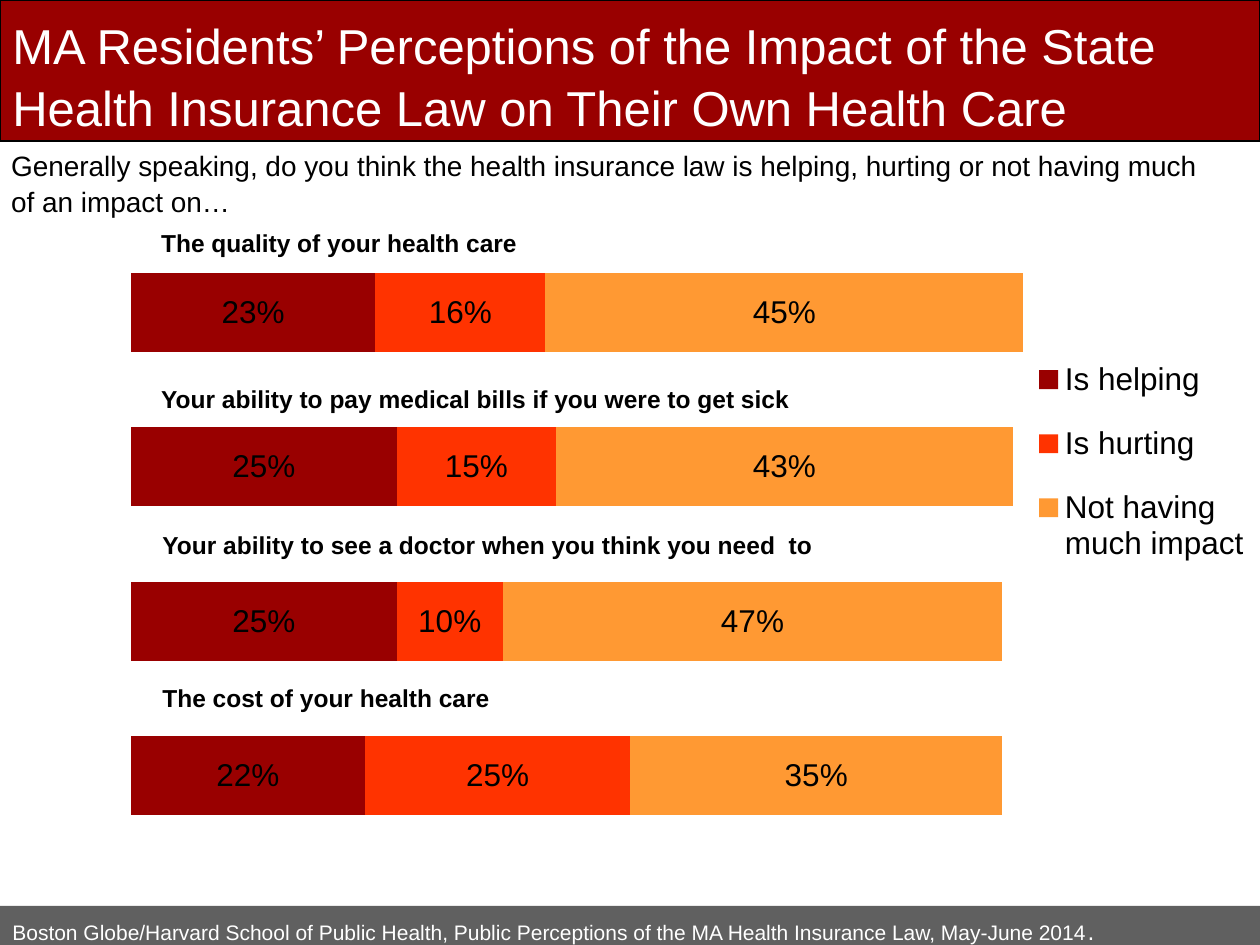
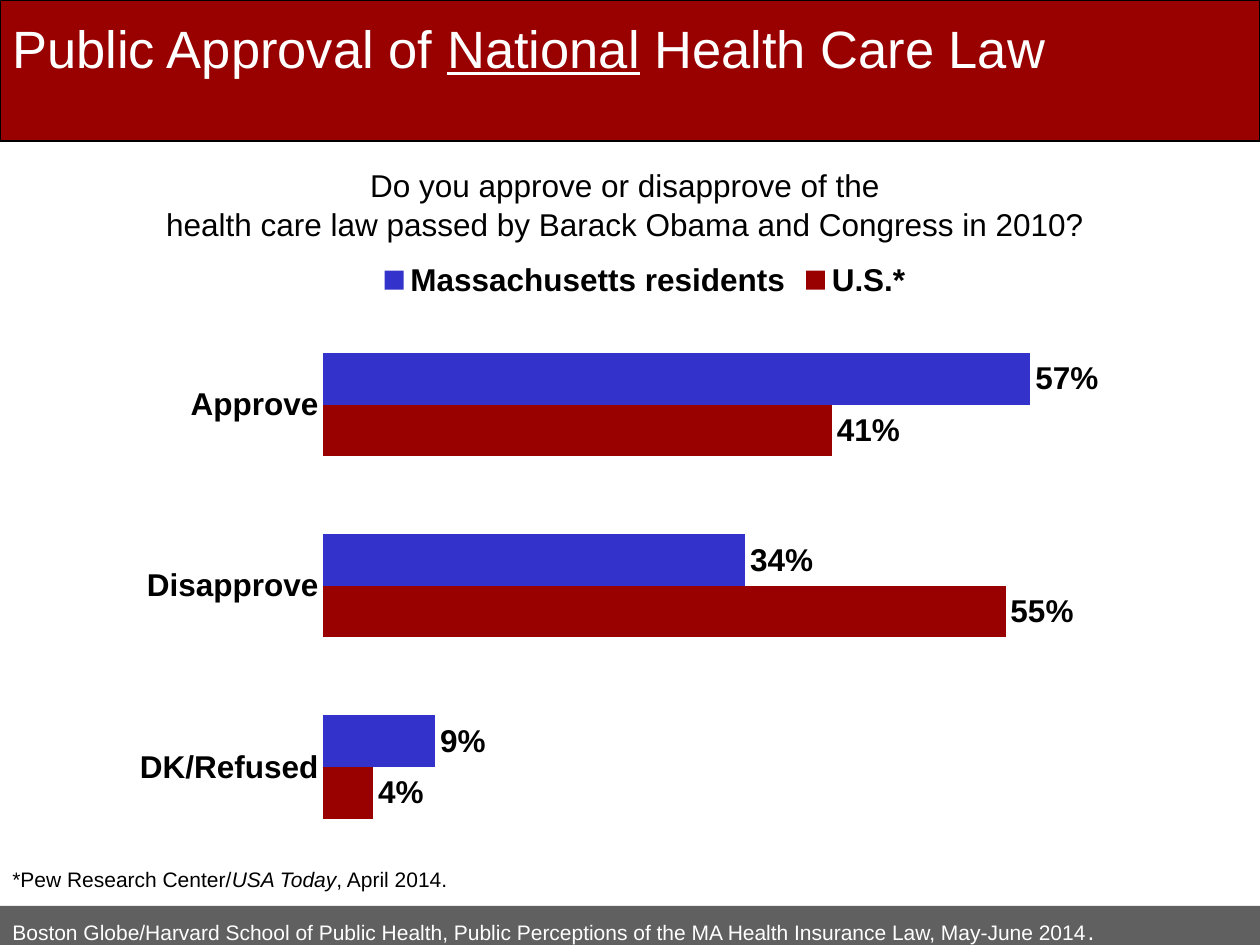
from dataclasses import dataclass

import pptx
import pptx.chart.data
import pptx.dml.color
import pptx.enum.chart
import pptx.enum.shapes
import pptx.enum.text
import pptx.oxml
import pptx.oxml.ns
import pptx.util

PX = 9144  # EMU per px, 100 px to the inch
CHART = pptx.enum.chart
ALIGN = pptx.enum.text.PP_ALIGN


@dataclass(frozen=True)
class Theme:
    font: str = "Arial"
    white: str = "FFFFFF"
    black: str = "000000"
    red: str = "990000"
    grey: str = "606060"
    orange: str = "FF3300"
    amber: str = "FF9933"
    blue: str = "3333CC"
    note: int = 12
    label: int = 14
    lead: int = 16
    body: int = 18
    title: int = 28
    large: int = 30
    leading: float = 1.05


THEME = Theme()


@dataclass(frozen=True)
class Rect:
    left: int
    top: int
    width: int
    height: int

    def emu(self) -> tuple[int, ...]:
        return tuple(n * PX for n in (self.left, self.top, self.width, self.height))


@dataclass(frozen=True)
class Run:
    text: str
    size: int | None = None
    italic: bool | None = None
    under: bool | None = None


@dataclass(frozen=True)
class Text:
    rect: Rect
    lines: tuple[tuple[Run, ...], ...]
    size: int
    color: str = THEME.black
    bold: bool = False
    align: ALIGN = ALIGN.LEFT


@dataclass(frozen=True)
class Series:
    name: str
    color: str
    values: tuple[float, ...]


@dataclass(frozen=True)
class Frame:
    """Place inside a chart, as shares of its width and height."""
    x: float
    y: float
    w: float
    h: float


@dataclass(frozen=True)
class Bars:
    rect: Rect
    kind: CHART.XL_CHART_TYPE
    cats: tuple[str, ...]
    series: tuple[Series, ...]
    plot: Frame
    top: float
    gap: int
    overlap: int
    spot: CHART.XL_LABEL_POSITION
    side: CHART.XL_LEGEND_POSITION
    key: Frame | None = None
    bold: bool = False
    named: bool = True


FOOTER = (
    Run("Boston Globe/Harvard School of Public Health, Public Perceptions "
        "of the MA Health Insurance Law, May-June 2014"),
    Run(".", size=THEME.label),
)


def rgb(code: str) -> pptx.dml.color.RGBColor:
    return pptx.dml.color.RGBColor.from_string(code)


def style(font, size: int, color: str, bold: bool = False) -> None:
    font.name = THEME.font
    font.size = pptx.util.Pt(size)
    font.bold = bold
    font.color.rgb = rgb(color)


def write(para, runs: tuple[Run, ...], size: int, color: str, bold: bool = False) -> None:
    style(para.font, size, color, bold)
    for item in runs:
        run = para.add_run()
        run.text = item.text
        if item.size:
            run.font.size = pptx.util.Pt(item.size)
        if item.italic:
            run.font.italic = True
        if item.under:
            run.font.underline = True


def add_band(slide, rect: Rect, fill: str, line: str | None = None):
    band = slide.shapes.add_shape(pptx.enum.shapes.MSO_SHAPE.RECTANGLE, *rect.emu())
    band.shadow.inherit = False
    band.fill.solid()
    band.fill.fore_color.rgb = rgb(fill)
    if line:
        band.line.color.rgb = rgb(line)
        band.line.width = pptx.util.Pt(1)
    else:
        band.line.fill.background()
    return band


def add_text(slide, text: Text) -> None:
    frame = slide.shapes.add_textbox(*text.rect.emu()).text_frame
    frame.word_wrap = True
    frame.auto_size = pptx.enum.text.MSO_AUTO_SIZE.SHAPE_TO_FIT_TEXT
    for i, runs in enumerate(text.lines):
        para = frame.add_paragraph() if i else frame.paragraphs[0]
        para.alignment = text.align
        para.line_spacing = THEME.leading
        write(para, runs, text.size, text.color, text.bold)


def add_title(slide, runs: tuple[Run, ...], size: int, height: int) -> None:
    add_text(slide, Text(Rect(0, 5, 1000, height), (runs,), size, THEME.white))


def set_frame(parent, index: int, frame: Frame, inner: bool = False) -> None:
    """Give a plot area or legend a fixed place."""
    for old in parent.findall(pptx.oxml.ns.qn("c:layout")):
        parent.remove(old)
    target = '<c:layoutTarget val="inner"/>' if inner else ""
    modes = "".join(f'<c:{axis}Mode val="edge"/>' for axis in "xy")
    sizes = "".join(f'<c:{name} val="{getattr(frame, name)}"/>' for name in "xywh")
    parent.insert(index, pptx.oxml.parse_xml(
        f'<c:layout {pptx.oxml.ns.nsdecls("c")}><c:manualLayout>'
        f"{target}{modes}{sizes}</c:manualLayout></c:layout>"))


def add_bars(slide, bars: Bars) -> None:
    data = pptx.chart.data.CategoryChartData(number_format="0%")
    data.categories = bars.cats
    for item in bars.series:
        data.add_series(item.name, item.values)
    chart = slide.shapes.add_chart(bars.kind, *bars.rect.emu(), data).chart
    style(chart.font, THEME.body, THEME.black, bars.bold)
    chart.has_title = False

    scale = chart.value_axis
    scale.minimum_scale, scale.maximum_scale = 0, bars.top
    scale.has_major_gridlines = False
    scale.visible = False
    names = chart.category_axis
    names.visible = bars.named
    names.major_tick_mark = CHART.XL_TICK_MARK.NONE
    names.format.line.fill.background()

    plot = chart.plots[0]
    plot.vary_by_categories = False
    plot.gap_width, plot.overlap = bars.gap, bars.overlap
    plot.has_data_labels = True
    labels = plot.data_labels
    labels.show_value = True
    labels.number_format, labels.number_format_is_linked = "0%", False
    labels.position = bars.spot
    style(labels.font, THEME.body, THEME.black, bars.bold)
    for item, drawn in zip(bars.series, plot.series):
        drawn.format.fill.solid()
        drawn.format.fill.fore_color.rgb = rgb(item.color)

    chart.has_legend = True
    legend = chart.legend
    legend.position = bars.side
    legend.include_in_layout = False
    style(legend.font, THEME.body, THEME.black, bars.bold)
    set_frame(chart._chartSpace.chart.plotArea, 0, bars.plot, inner=True)
    if bars.key:
        set_frame(legend._element, 1, bars.key)


def new_slide(deck):
    """Add a blank slide with the title band and the source footer."""
    slide = deck.slides.add_slide(deck.slide_layouts[6])
    add_band(slide, Rect(0, 0, 1000, 112), THEME.red, THEME.black)
    frame = add_band(slide, Rect(0, 719, 1015, 39), THEME.grey).text_frame
    frame.word_wrap = True
    frame.vertical_anchor = pptx.enum.text.MSO_ANCHOR.MIDDLE
    para = frame.paragraphs[0]
    para.alignment = ALIGN.LEFT
    write(para, FOOTER, THEME.note, THEME.white)
    return slide


def add_impact(deck) -> None:
    slide = new_slide(deck)
    add_bars(slide, Bars(
        Rect(104, 112, 896, 565), CHART.XL_CHART_TYPE.BAR_STACKED,
        ("1", "2", "3", "4"),
        (Series("Is helping", THEME.red, (0.22, 0.25, 0.25, 0.23)),
         Series("Is hurting", THEME.orange, (0.25, 0.10, 0.15, 0.16)),
         Series("Not having much impact", THEME.amber, (0.35, 0.47, 0.43, 0.45))),
        plot=Frame(0, 0.132, 0.847, 0.868), top=0.9, gap=95, overlap=100,
        spot=CHART.XL_LABEL_POSITION.CENTER, side=CHART.XL_LEGEND_POSITION.RIGHT,
        key=Frame(0.79, 0.27, 0.21, 0.36), named=False))
    add_title(slide, (Run("MA Residents’ Perceptions of the Impact of the State "
                          "Health Insurance Law on Their Own Health Care"),),
              THEME.title, 104)
    add_text(slide, Text(
        Rect(-1, 112, 981, 64),
        ((Run("Generally speaking, do you think the health insurance law is helping, "
              "hurting or not having much of an impact on…"),),), THEME.lead))
    for left, top, topic in (
        (118, 175, "The quality of your health care"),
        (118, 299, "Your ability to pay medical bills if you were to get sick"),
        (119, 415, "Your ability to see a doctor when you think you need  to"),
        (119, 536, "The cost of your health care"),
    ):
        add_text(slide, Text(Rect(left, top, 632, 34), ((Run(topic),),),
                             THEME.label, bold=True))


def add_approval(deck) -> None:
    slide = new_slide(deck)
    add_bars(slide, Bars(
        Rect(41, 196, 942, 494), CHART.XL_CHART_TYPE.BAR_CLUSTERED,
        ("DK/Refused", "Disapprove", "Approve"),
        (Series("U.S.*", THEME.red, (0.04, 0.55, 0.41)),
         Series("Massachusetts residents", THEME.blue, (0.09, 0.34, 0.57))),
        plot=Frame(0.229, 0.108, 0.627, 0.873), top=0.6, gap=150, overlap=0,
        spot=CHART.XL_LABEL_POSITION.OUTSIDE_END,
        side=CHART.XL_LEGEND_POSITION.TOP, bold=True))
    add_text(slide, Text(
        Rect(57, 125, 878, 71),
        ((Run("Do you approve or disapprove of the"),),
         (Run("health care law passed by Barack Obama and Congress in 2010?"),)),
        THEME.body, align=ALIGN.CENTER))
    add_title(slide, (Run("Public Approval of "), Run("National", under=True),
                      Run(" Health Care Law")), THEME.large, 61)
    add_text(slide, Text(
        Rect(0, 682, 970, 30),
        ((Run("*Pew Research Center/"), Run("USA Today", italic=True),
          Run(", April 2014.")),), THEME.note))


def main() -> None:
    deck = pptx.Presentation()
    deck.slide_width, deck.slide_height = 1000 * PX, 750 * PX
    add_impact(deck)
    add_approval(deck)
    deck.save("out.pptx")


if __name__ == "__main__":
    main()
